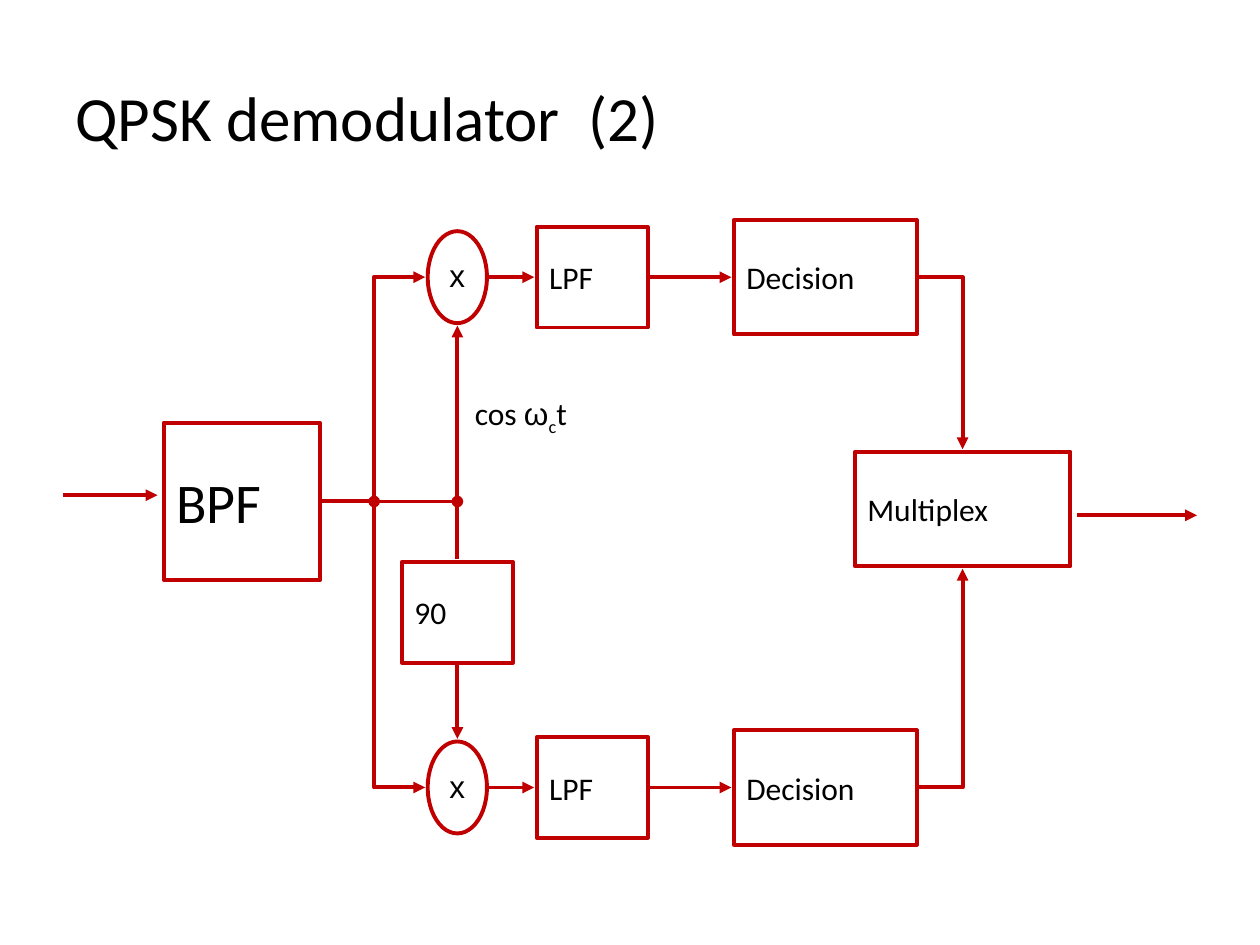
import pptx
import pptx.util
import pptx.dml.color
import pptx.enum.shapes
import pptx.enum.text
import pptx.oxml.ns
import lxml.etree

RED = pptx.dml.color.RGBColor(0xC0, 0x00, 0x00)
BLACK = pptx.dml.color.RGBColor(0x00, 0x00, 0x00)
SHAPE = pptx.enum.shapes.MSO_SHAPE
LINK = pptx.enum.shapes.MSO_CONNECTOR
ALIGN = pptx.enum.text.PP_ALIGN
MIDDLE = pptx.enum.text.MSO_ANCHOR.MIDDLE
inch = pptx.util.Inches
qn = pptx.oxml.ns.qn

# Content: signal rows, mixer column, block kinds and blocks
TITLE = "QPSK demodulator  (2)"
TOP, MID, LOW = 2.2, 3.98, 6.25
MIX, GAP = 3.63, 0.02

KINDS = {  # width, height, text size
    "input": (1.24, 1.25, 32),
    "mixer": (0.47, 0.73, 18),
    "filter": (0.88, 0.80, 18),
    "decide": (1.45, 0.91, 18),
    "output": (1.71, 0.91, 18),
}
BLOCKS = {  # text, kind, centre x, centre y
    "bpf": ("BPF", "input", 1.92, MID),
    "shift": ("90", "filter", MIX, 4.86),
    "mux": ("Multiplex", "output", 7.64, 4.04),
}
for row, y in (("top", TOP), ("low", LOW)):
    BLOCKS["mix " + row] = ("x", "mixer", MIX, y)
    BLOCKS["lpf " + row] = ("LPF", "filter", 4.7, y)
    BLOCKS["dec " + row] = ("Decision", "decide", 6.55, y)

LINKS = [  # from block and side, to block and side, form
    ("shift", "N", "mix top", "S", "line"),
    ("shift", "S", "mix low", "N", "line"),
    ("dec top", "E", "mux", "N", "bentConnector2"),
    ("dec low", "E", "mux", "S", "bentConnector2"),
]
for row in ("top", "low"):
    LINKS += [
        ("bpf", "E", "mix " + row, "W", "bentConnector3"),
        ("mix " + row, "E", "lpf " + row, "W", "line"),
        ("lpf " + row, "E", "dec " + row, "W", "line"),
    ]
CARRIER = [("cos ", "Calibri", 0), ("ω", "Arial", 0),
           ("c", "Calibri", -25000), ("t", "Calibri", 0)]
SIDES = {"N": (0, -1), "S": (0, 1), "E": (1, 0), "W": (-1, 0)}


def style(run, size, face="Calibri"):
    run.font.size = pptx.util.Pt(size)
    run.font.name = face
    run.font.color.rgb = BLACK


def port(name, side):
    _, kind, x, y = BLOCKS[name]
    w, h, _ = KINDS[kind]
    dx, dy = SIDES[side]
    return x + dx * (w / 2 + GAP), y + dy * (h / 2 + GAP)


def block(text, kind, x, y):
    w, h, size = KINDS[kind]
    mixer = kind == "mixer"
    shape = slide.shapes.add_shape(
        SHAPE.OVAL if mixer else SHAPE.RECTANGLE,
        inch(x - w / 2), inch(y - h / 2), inch(w), inch(h))
    shape.shadow.inherit = False
    shape.fill.background()
    shape.line.color.rgb = RED
    shape.line.width = pptx.util.Pt(2.25)
    frame = shape.text_frame
    frame.text = text
    frame.vertical_anchor = MIDDLE
    frame.word_wrap = not mixer
    if mixer:
        frame.margin_top = inch(0.02)
    para = frame.paragraphs[0]
    para.alignment = ALIGN.CENTER if mixer else ALIGN.LEFT
    style(para.runs[0], size, "Arial" if mixer else "Calibri")


def link(start, end, form="line", head=None, tail="triangle"):
    kind = LINK.STRAIGHT if form == "line" else LINK.ELBOW
    wire = slide.shapes.add_connector(kind, *map(inch, start + end))
    wire.line.color.rgb = RED
    wire.line.width = pptx.util.Pt(2.25)
    props = wire._element.spPr
    props.find(qn("a:prstGeom")).set("prst", form)
    for tag, mark in (("a:headEnd", head), ("a:tailEnd", tail)):
        if mark:
            lxml.etree.SubElement(wire.line._get_or_add_ln(), qn(tag), type=mark)
    lxml.etree.SubElement(props, qn("a:effectLst"))


deck = pptx.Presentation()
deck.slide_width, deck.slide_height = inch(10), inch(7.5)
slide = deck.slides.add_slide(deck.slide_layouts[5])

# Title
title = slide.shapes.title
title.left, title.top, title.width, title.height = map(inch, (0.5, 0.3, 9, 1.25))
title.text_frame.text = TITLE
title.text_frame.vertical_anchor = MIDDLE
title.text_frame.paragraphs[0].alignment = ALIGN.LEFT
style(title.text_frame.paragraphs[0].runs[0], 36)

# Blocks and the links between them
for item in BLOCKS.values():
    block(*item)
for a, out, b, into, form in LINKS:
    link(port(a, out), port(b, into), form)

# Signal in, signal out, and the carrier tap
link((0.5, 3.93), (1.25, 3.93))
link((8.55, 4.09), (9.5, 4.09))
link((2.97, MID), (MIX, MID), head="oval", tail="oval")

# Carrier label
label = slide.shapes.add_textbox(*map(inch, (3.67, 3.08, 1.58, 0.4)))
label.text_frame.word_wrap = True
for text, face, shift in CARRIER:
    run = label.text_frame.paragraphs[0].add_run()
    run.text = text
    style(run, 18, face)
    if shift:
        run.font._element.set("baseline", str(shift))

deck.save("out.pptx")
